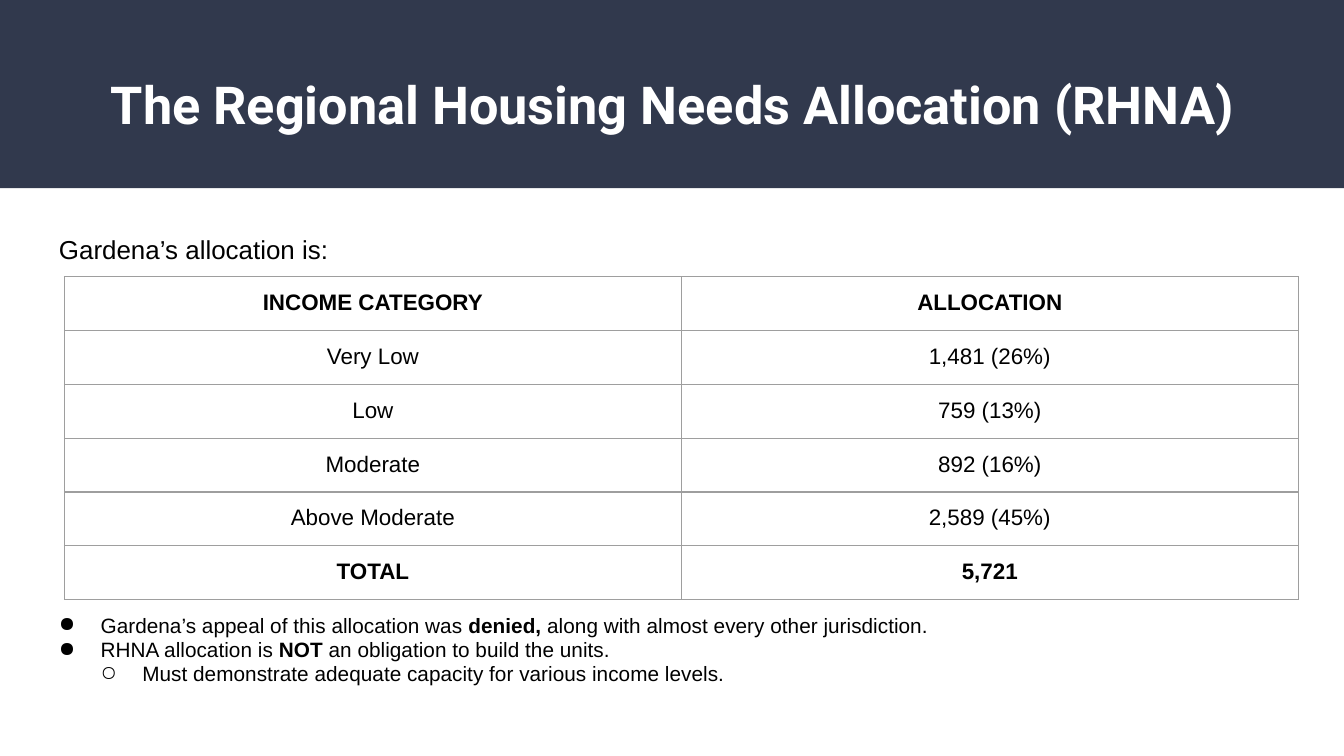
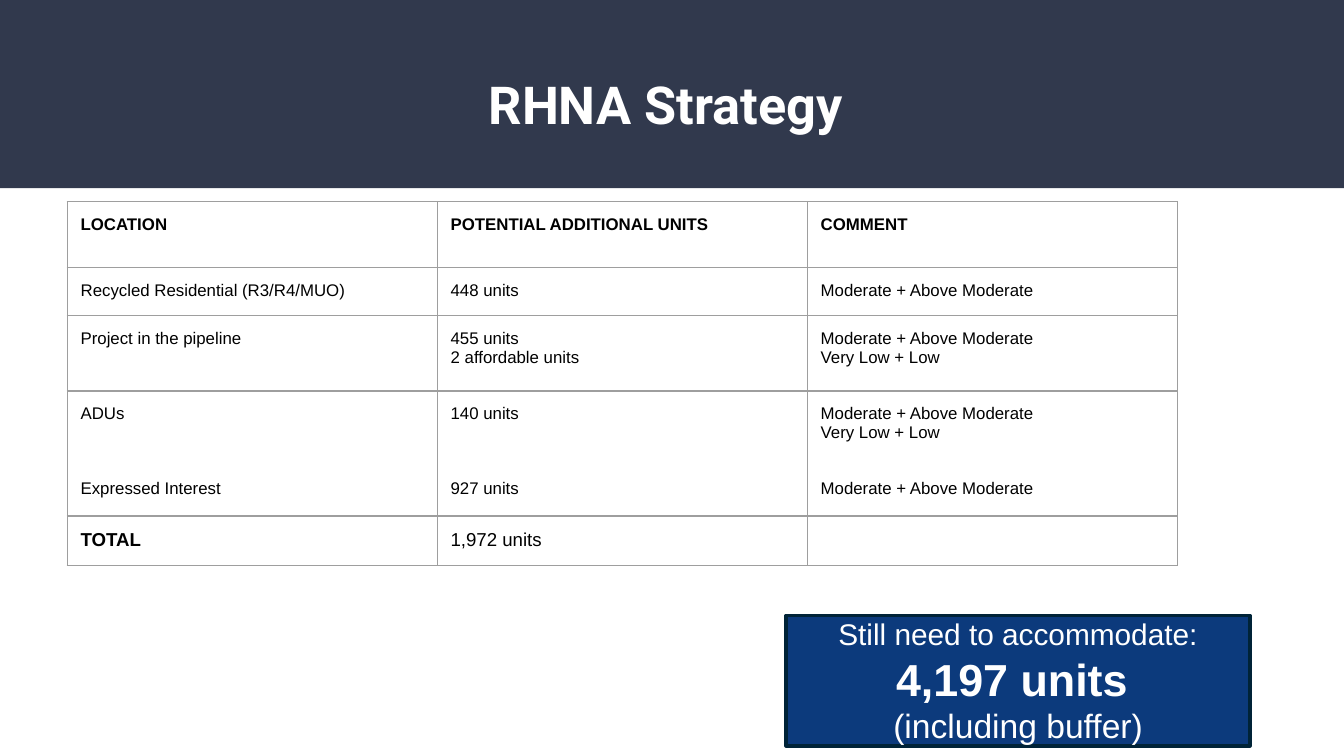
from dataclasses import dataclass
from typing import Any

from pptx import Presentation
from pptx import util as u
from pptx.dml.color import RGBColor
from pptx.enum import shapes, text
from pptx.oxml import parse_xml
from pptx.oxml.ns import nsdecls, qn
from lxml import etree

NAVY = RGBColor(0x31, 0x39, 0x4D)
BLUE = RGBColor(0x0C, 0x3A, 0x7C)
EDGE = RGBColor(0x00, 0x23, 0x37)
GREY = RGBColor(0x9E, 0x9E, 0x9E)
WHITE = RGBColor(0xFF, 0xFF, 0xFF)
BLACK = RGBColor(0, 0, 0)
LEFT, MID = text.PP_ALIGN.LEFT, text.PP_ALIGN.CENTER
PAD = u.Inches(0.1)
STEP = u.Inches(0.31)


@dataclass
class Run:
    text: str
    bold: bool = False
    size: float = 0


@dataclass
class Para:
    runs: list[Run]
    size: float
    gap: float = 0
    bullet: str = ""
    level: int = 0


@dataclass
class Grid:
    left: float
    top: float
    width: float
    heights: list[float]
    rows: list[list[list[Para]]]
    align: Any = LEFT


def line(words: str, size: float, bold: bool = False, gap: float = 0) -> Para:
    return Para([Run(words, bold)], size, gap)


def mark(para: Any, item: Para) -> None:
    """Give a paragraph its bullet and hanging indent."""
    props = para._p.get_or_add_pPr()
    props.set("marL", str(STEP * (item.level + 1)))
    props.set("indent", str(-STEP))
    etree.SubElement(props, qn("a:buChar"), char=item.bullet)


def write(frame: Any, paras: list[Para], *, color: RGBColor = BLACK,
          font: str = "Arial", align: Any = LEFT, pitch: float = 1.0) -> None:
    for i, item in enumerate(paras):
        para = frame.paragraphs[0] if i == 0 else frame.add_paragraph()
        para.alignment = align
        para.level = item.level
        para.line_spacing = pitch
        if item.gap:
            para.space_before = u.Pt(item.gap)
        if item.bullet:
            mark(para, item)
        for part in item.runs:
            run = para.add_run()
            run.text = part.text
            run.font.name = font
            run.font.size = u.Pt(part.size or item.size)
            run.font.bold = part.bold
            run.font.color.rgb = color
        etree.SubElement(para._p, qn("a:endParaRPr"), sz=str(round(item.size * 100)))


def add_box(slide: Any, left: float, top: float, width: float, height: float,
            paras: list[Para], **form: Any) -> None:
    box = slide.shapes.add_textbox(*map(u.Inches, (left, top, width, height)))
    frame = box.text_frame
    frame.word_wrap = True
    frame.margin_left = frame.margin_right = PAD
    frame.margin_top = frame.margin_bottom = PAD
    write(frame, paras, **form)


def add_rect(slide: Any, left: float, top: float, width: float, height: float,
             fill: RGBColor) -> Any:
    rect = slide.shapes.add_shape(shapes.MSO_SHAPE.RECTANGLE,
                                  *map(u.Inches, (left, top, width, height)))
    rect.shadow.inherit = False
    rect.fill.solid()
    rect.fill.fore_color.rgb = fill
    rect.line.fill.background()
    return rect


def edge(cell: Any) -> None:
    """Draw a thin grey border on all sides of a cell."""
    props = cell._tc.get_or_add_tcPr()
    for side in "LRTB":
        props.append(parse_xml(
            f'<a:ln{side} {nsdecls("a")} w="{u.Pt(0.75)}"><a:solidFill>'
            f'<a:srgbClr val="{GREY}"/></a:solidFill></a:ln{side}>'))


def add_grid(slide: Any, grid: Grid) -> None:
    count = len(grid.rows[0])
    frame = slide.shapes.add_table(
        len(grid.rows), count, u.Inches(grid.left), u.Inches(grid.top),
        u.Inches(grid.width), u.Inches(sum(grid.heights)))
    table = frame.table
    table.first_row = table.horz_banding = False
    for col in table.columns:
        col.width = u.Inches(grid.width / count)
    for r, (height, row) in enumerate(zip(grid.heights, grid.rows)):
        table.rows[r].height = u.Inches(height)
        for c, paras in enumerate(row):
            cell = table.cell(r, c)
            cell.margin_left = cell.margin_right = PAD
            cell.margin_top = cell.margin_bottom = PAD
            edge(cell)
            cell.fill.solid()
            cell.fill.fore_color.rgb = WHITE
            write(cell.text_frame, paras, align=grid.align)


def add_slide(deck: Any, title: str) -> Any:
    """Start a slide with the shared band and title."""
    slide = deck.slides.add_slide(deck.slide_layouts[6])
    add_rect(slide, 0, 0, 10, 1.4, NAVY)
    add_box(slide, 0.34, 0.44, 9.32, 0.68, [line(title, 28, True)],
            color=WHITE, font="Roboto", align=MID)
    return slide


def add_needs(deck: Any) -> None:
    slide = add_slide(deck, "The Regional Housing Needs Allocation (RHNA)")
    size = 11.1
    add_box(slide, 0.34, 1.65, 9.32, 3.68, [
        line("Gardena’s allocation is:", 13.9),
        Para([Run("Gardena’s appeal of this allocation was "), Run("denied, ", True),
              Run("along with almost every other jurisdiction.")], size, 187, "●"),
        Para([Run("RHNA allocation is "), Run("NOT", True),
              Run(" an obligation to build the units.")], size, 0, "●"),
        Para([Run("Must demonstrate adequate capacity for various income levels.")],
             size, 0, "○", 1),
    ], pitch=0.97)
    data = [
        ("INCOME CATEGORY", "ALLOCATION"),
        ("Very Low", "1,481 (26%)"),
        ("Low", "759 (13%)"),
        ("Moderate", "892 (16%)"),
        ("Above Moderate", "2,589 (45%)"),
        ("TOTAL", "5,721"),
    ]
    ends = (0, len(data) - 1)
    rows = [[[line(word, 12, r in ends)] for word in row] for r, row in enumerate(data)]
    add_grid(slide, Grid(0.48, 2.06, 9.18, [0.33] * len(rows), rows, MID))


def add_plan(deck: Any) -> None:
    slide = add_slide(deck, "RHNA Strategy ")
    size = 9
    mod, low = line("Moderate + Above Moderate", size), line("Very Low + Low", size)
    heads = ("LOCATION", "POTENTIAL ADDITIONAL UNITS", "COMMENT")
    rows = [
        [[line(head, size, True)] for head in heads],
        [[line("Recycled Residential (R3/R4/MUO)", size)], [line("448 units", size)], [mod]],
        [[line("Project in the pipeline", size)],
         [line("455 units", size), line("2 affordable units", size)], [mod, low]],
        [[line("ADUs", size), line("Expressed Interest", size, gap=30)],
         [line("140 units", size), line("927 units", size, gap=30)],
         [mod, low, line("Moderate + Above Moderate", size, gap=20)]],
        [[line("TOTAL", 10, True)], [line("1,972 units", 10)], [Para([], 10)]],
    ]
    add_grid(slide, Grid(0.5, 1.5, 8.26, [0.49, 0.36, 0.56, 0.9, 0.31], rows))

    note = add_rect(slide, 5.85, 4.58, 3.45, 0.97, BLUE)
    note.line.color.rgb = EDGE
    note.line.width = u.Pt(2)
    note.text_frame.word_wrap = True
    note.text_frame.vertical_anchor = text.MSO_ANCHOR.MIDDLE
    write(note.text_frame, [
        Para([Run("Still need to accommodate: "), Run("4,197 units ", True, 24)], 16),
        line("(including buffer)", 18),
    ], color=WHITE, align=MID)


def main() -> None:
    deck = Presentation()
    deck.slide_width = u.Inches(10)
    deck.slide_height = deck.slide_width * 9 // 16
    add_needs(deck)
    add_plan(deck)
    deck.save("out.pptx")


if __name__ == "__main__":
    main()
